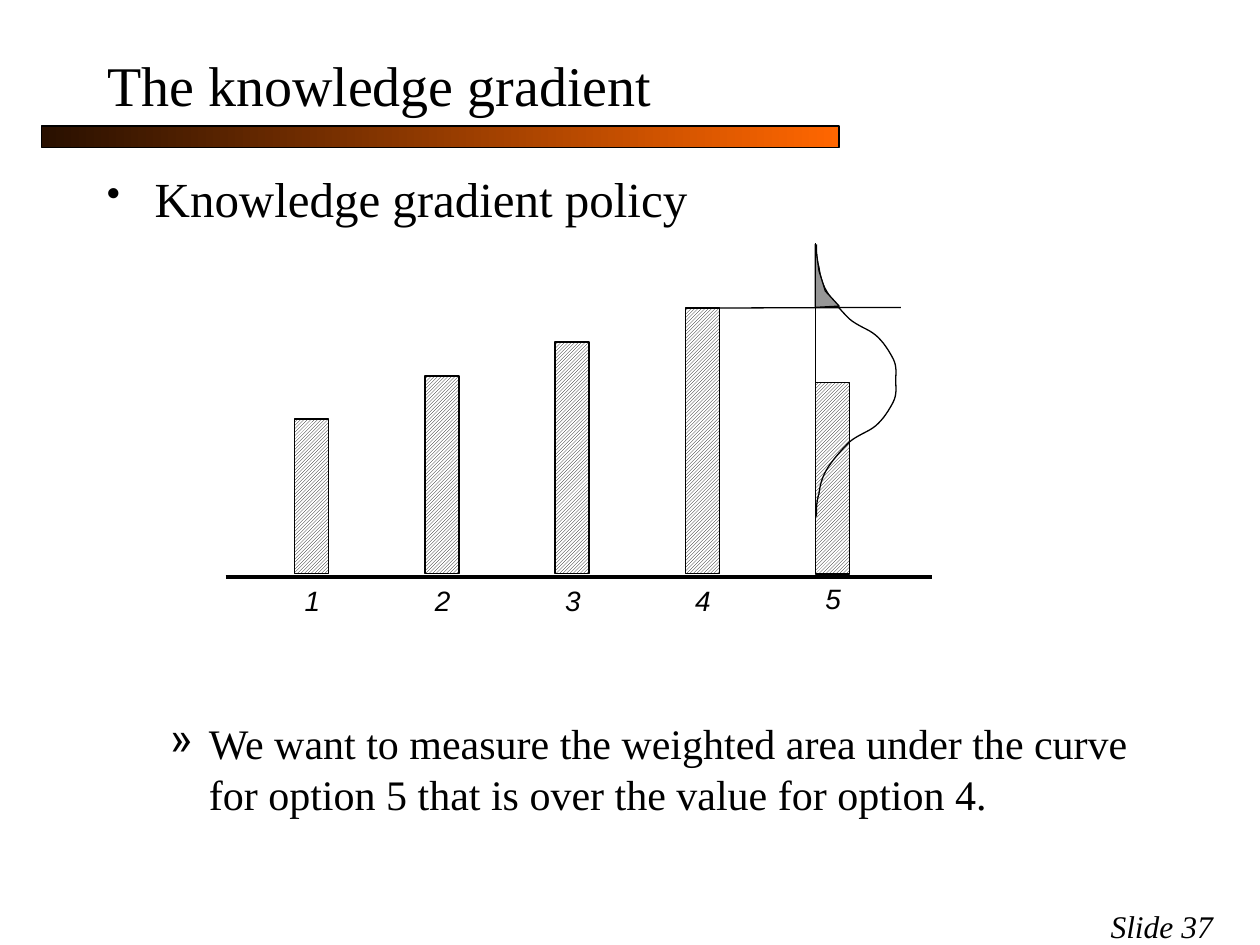
"""Build the knowledge gradient slide on a grid of 100 columns by 75 rows."""
from dataclasses import dataclass

from lxml.etree import SubElement
from pptx import Presentation
from pptx.dml.color import RGBColor
from pptx.enum.dml import MSO_PATTERN
from pptx.enum.shapes import MSO_CONNECTOR, MSO_SHAPE
from pptx.enum.text import MSO_ANCHOR, PP_ALIGN
from pptx.oxml.ns import qn
from pptx.util import Inches, Pt

HUES = {"ink": "000000", "paper": "FFFFFF", "dark": "291000",
        "flame": "FF6600", "tail": "969696"}
SERIF, SANS = "Times New Roman", "Arial"
FLOOR, FIRST, PITCH, WIDE = 45.55, 23.4, 10.33, 2.7
AXIS, MEAN = 64.7, 30.2

deck = Presentation()
deck.slide_width, deck.slide_height = Inches(10), Inches(7.5)
slide = deck.slides.add_slide(deck.slide_layouts[5])
shapes = slide.shapes


@dataclass
class Bar:
    name: str
    high: float
    label: float = 45.8


@dataclass
class Point:
    sign: str
    level: int
    left: float
    hang: float
    size: int
    scale: int


BARS = [Bar("1", 12.3), Bar("2", 15.7), Bar("3", 18.4), Bar("4", 21.1),
        Bar("5", 15.2, 45.7)]

HALF = [(71.1, 30.2), (71.1, 30.8), (71.2, 31.3), (70.9, 31.9),
        (70.6, 32.5), (70.1, 33.3), (69.5, 33.8),
        (68.9, 34.3), (68.1, 34.5), (67.4, 35.1),
        (66.8, 35.7), (66, 36.6), (65.6, 37.3),
        (65.2, 38), (65.1, 38.5), (65, 39.2),
        (64.8, 39.8), (64.8, 40.4), (64.8, 41)]

TAIL = [(64.7, 24.4), (66.6, 24.3), (65.5, 23.1), (65, 21.5), (64.7, 19.4)]


def grid(*cells: float) -> list[int]:
    """Turn columns or rows into lengths."""
    return [round(deck.slide_width * cell / 100) for cell in cells]


def hue(name: str) -> RGBColor:
    """Look up a colour."""
    return RGBColor.from_string(HUES[name])


def edge(shape, width: float = 0.75) -> None:
    """Draw a plain black outline."""
    shape.line.color.rgb = hue("ink")
    shape.line.width = Pt(width)


def style(para, face: str, size: int, slant: bool = False) -> None:
    """Set the font of a paragraph."""
    font = para.font
    font.name, font.size, font.italic = face, Pt(size), slant
    font.color.rgb = hue("ink")


def box(at: tuple, wrap: bool = True):
    """Add a text box and return its frame."""
    frame = shapes.add_textbox(*grid(*at)).text_frame
    frame.word_wrap = wrap
    return frame


def note(at: tuple, text: str, face: str, size: int, wrap: bool) -> None:
    """Add a centred italic note."""
    para = box(at, wrap).paragraphs[0]
    para.text, para.alignment = text, PP_ALIGN.CENTER
    style(para, face, size, True)


def block(at: tuple):
    """Add an outlined rectangle."""
    shape = shapes.add_shape(MSO_SHAPE.RECTANGLE, *grid(*at))
    shape.shadow.inherit = False
    edge(shape)
    return shape


def rule(ends: tuple, width: float = 0.75):
    """Add a straight line."""
    line = shapes.add_connector(MSO_CONNECTOR.STRAIGHT, *grid(*ends))
    edge(line, width)
    SubElement(line.element.spPr, qn("a:effectLst"))
    return line


def trace(spots: list, close: bool = False):
    """Add an outline through the given spots."""
    start, *rest = [tuple(grid(*spot)) for spot in spots]
    pen = shapes.build_freeform(*start)
    pen.add_line_segments(rest, close=close)
    shape = pen.convert_to_shape()
    shape.shadow.inherit = False
    edge(shape)
    return shape


def smooth(knots: list, steps: int = 8) -> list:
    """Sample a chain of cubic curves."""
    spots = [knots[0]]
    for i in range(0, len(knots) - 1, 3):
        for step in range(1, steps + 1):
            t = step / steps
            parts = ((1 - t) ** 3, 3 * t * (1 - t) ** 2,
                     3 * t ** 2 * (1 - t), t ** 3)
            spots.append(tuple(sum(part * knot[k] for part, knot
                                   in zip(parts, knots[i:i + 4]))
                               for k in (0, 1)))
    return spots


def bullet(para, text: str, kind: Point) -> None:
    """Write a bulleted paragraph."""
    para.text, para.level = text, kind.level
    props = para._p.get_or_add_pPr()
    left, hang = grid(kind.left, kind.hang)
    props.set("marL", str(left))
    props.set("indent", str(-hang))
    SubElement(props, qn("a:buSzPct")).set("val", str(kind.scale * 1000))
    SubElement(props, qn("a:buChar")).set("char", kind.sign)
    style(para, SERIF, kind.size)


def words() -> None:
    """Write the title, its band and the body text."""
    band = block((3.3, 10, 63.3, 1.7))
    band.fill.gradient()
    band.fill.gradient_angle = 0
    for stop, name in zip(band.fill.gradient_stops, ("dark", "flame")):
        stop.color.rgb = hue(name)

    title = shapes.title
    title.left, title.top, title.width, title.height = grid(7.5, 3.3, 85, 6.7)
    frame = title.text_frame
    frame.text, frame.vertical_anchor = "The knowledge gradient", MSO_ANCHOR.MIDDLE
    frame.paragraphs[0].alignment = PP_ALIGN.LEFT
    style(frame.paragraphs[0], SERIF, 32)

    body = box((7.5, 12.9, 85, 53.8))
    bullet(body.paragraphs[0], "Knowledge gradient policy",
           Point("•", 0, 3.8, 3.8, 28, 80))
    para = body.add_paragraph()
    bullet(para, "We want to measure the weighted area under the curve "
           "for option 5 that is over the value for option 4.",
           Point("»", 1, 8.1, 3.1, 24, 100))
    para.space_before, para.line_spacing = Pt(280), Pt(29)


def graph() -> None:
    """Draw the bars, the bell curve and its shaded tail."""
    rule((17.9, 45.8, 74, 45.8), 2.25)
    posts = []
    for i, bar in enumerate(BARS):
        left = FIRST + i * PITCH
        post = block((left, FLOOR - bar.high, WIDE, bar.high))
        post.fill.patterned()
        post.fill.pattern = MSO_PATTERN.DARK_UPWARD_DIAGONAL
        post.fill.fore_color.rgb = hue("ink")
        post.fill.back_color.rgb = hue("paper")
        posts.append(post)
        note((left - 0.2, bar.label, 3.2, 3.7), bar.name, SANS, 16, False)

    level = rule((55.7, 24.4, 71.5, 24.4))
    level.begin_connect(posts[3], 0)
    rule((AXIS, 41.2, AXIS, 19.3))

    low = smooth(HALF)
    high = [(x, 2 * MEAN - y) for x, y in reversed(low)]
    trace(high + low[1:]).fill.background()
    tail = trace(TAIL, True)
    tail.fill.solid()
    tail.fill.fore_color.rgb = hue("tail")


if __name__ == "__main__":
    words()
    graph()
    note((81.8, 71.5, 20.8, 5), "Slide 37", SERIF, 18, True)
    deck.save("out.pptx")
